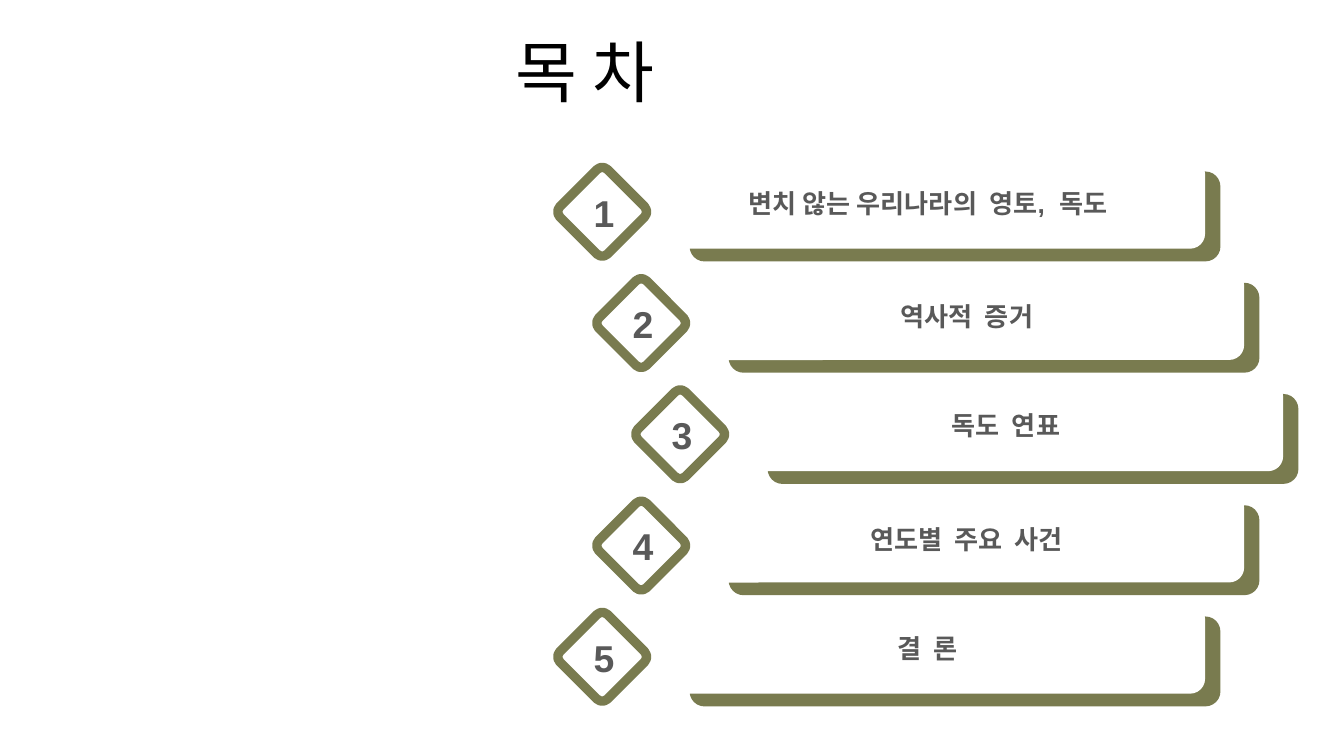
from dataclasses import dataclass

from pptx import Presentation
from pptx.dml.color import RGBColor
from pptx.enum.shapes import MSO_SHAPE
from pptx.enum.text import MSO_ANCHOR, MSO_AUTO_SIZE, PP_ALIGN
from pptx.shapes.autoshape import Shape
from pptx.shapes.shapetree import GroupShapes, SlideShapes
from pptx.util import Pt

ROUNDED = MSO_SHAPE.ROUNDED_RECTANGLE
MIDDLE = MSO_ANCHOR.MIDDLE
FIT_SHAPE = MSO_AUTO_SIZE.SHAPE_TO_FIT_TEXT
LEFT, CENTER = PP_ALIGN.LEFT, PP_ALIGN.CENTER

OLIVE = RGBColor(0x79, 0x7B, 0x4F)
WHITE = RGBColor(0xFF, 0xFF, 0xFF)
GRAY = RGBColor(0x59, 0x59, 0x59)
BLACK = RGBColor(0x00, 0x00, 0x00)
FONT = "Arial"

# Grid in points: first row's corner, row pitch and sideways step
FIRST_LEFT, FIRST_TOP = 304.6, 85.1
ROW_PITCH, INDENT_STEP = 59.6, 20.9
PLATE_WIDTH, PLATE_HEIGHT = 284.4, 48.2


@dataclass(frozen=True)
class Box:
    left: float
    top: float
    width: float
    height: float

    def moved(self, dx: float, dy: float) -> "Box":
        return Box(self.left + dx, self.top + dy, self.width, self.height)

    def lengths(self) -> tuple[Pt, Pt, Pt, Pt]:
        return Pt(self.left), Pt(self.top), Pt(self.width), Pt(self.height)


@dataclass(frozen=True)
class Chapter:
    title: str
    indent: int
    title_drop: float = 0


# Parts of a row, relative to its corner
SHADE = Box(64.8, 6.8, PLATE_WIDTH, PLATE_HEIGHT)
PLATE = Box(56.6, 0, PLATE_WIDTH, PLATE_HEIGHT)
TITLE = Box(73.4, 11.2, 238.3, 24.5)
DIAMOND = Box(0, 10.4, 36, 36)
NUMBER = Box(6.4, 12.7, 23.8, 31.7)

CHAPTERS = [
    Chapter("변치 않는 우리나라의  영토,  독도", 0),
    Chapter("역사적  증거", 1, 1.4),
    Chapter("독도  연표", 2),
    Chapter("연도별  주요  사건", 1, 1.4),
    Chapter("결  론", 0),
]


def add_rounded(shapes: GroupShapes, box: Box, fill: RGBColor) -> Shape:
    rounded = shapes.add_shape(ROUNDED, *box.lengths())
    rounded.shadow.inherit = False
    rounded.fill.solid()
    rounded.fill.fore_color.rgb = fill
    rounded.line.fill.background()
    return rounded


def add_text(shapes: SlideShapes | GroupShapes, box: Box, text: str, size: float,
             color: RGBColor, align: PP_ALIGN, bold: bool, wrap: bool) -> Shape:
    label = shapes.add_textbox(*box.lengths())
    frame = label.text_frame
    frame.text = text
    frame.word_wrap = wrap
    frame.vertical_anchor = MIDDLE
    paragraph = frame.paragraphs[0]
    paragraph.alignment = align
    font = paragraph.runs[0].font
    font.name, font.size, font.bold = FONT, Pt(size), bold
    font.color.rgb = color
    return label


def add_chapter(shapes: SlideShapes, index: int, chapter: Chapter) -> None:
    row = shapes.add_group_shape().shapes
    left = FIRST_LEFT + chapter.indent * INDENT_STEP
    top = FIRST_TOP + index * ROW_PITCH

    # Title plate with its offset shade
    add_rounded(row, SHADE.moved(left, top), OLIVE)
    add_rounded(row, PLATE.moved(left, top), WHITE)
    title = add_text(row, TITLE.moved(left, top + chapter.title_drop),
                     chapter.title, 14, GRAY, CENTER, True, True)
    title.text_frame.auto_size = FIT_SHAPE

    # Numbered diamond
    diamond = add_rounded(row, DIAMOND.moved(left, top), WHITE)
    diamond.adjustments[0] = 0.11
    diamond.rotation = 45
    diamond.line.color.rgb = OLIVE
    diamond.line.width = Pt(5)
    number = add_text(row, NUMBER.moved(left, top), str(index + 1),
                      20, GRAY, CENTER, True, False)
    number.text_frame.auto_size = FIT_SHAPE


def main() -> None:
    presentation = Presentation()
    presentation.slide_width, presentation.slide_height = Pt(720), Pt(405)
    slide = presentation.slides.add_slide(presentation.slide_layouts[6])

    # Heading
    add_text(slide.shapes, Box(269.3, 15.1, 450.7, 45.4), "목 차",
             36, BLACK, LEFT, False, True)

    # Contents
    for index, chapter in enumerate(CHAPTERS):
        add_chapter(slide.shapes, index, chapter)

    presentation.save("out.pptx")


if __name__ == "__main__":
    main()
